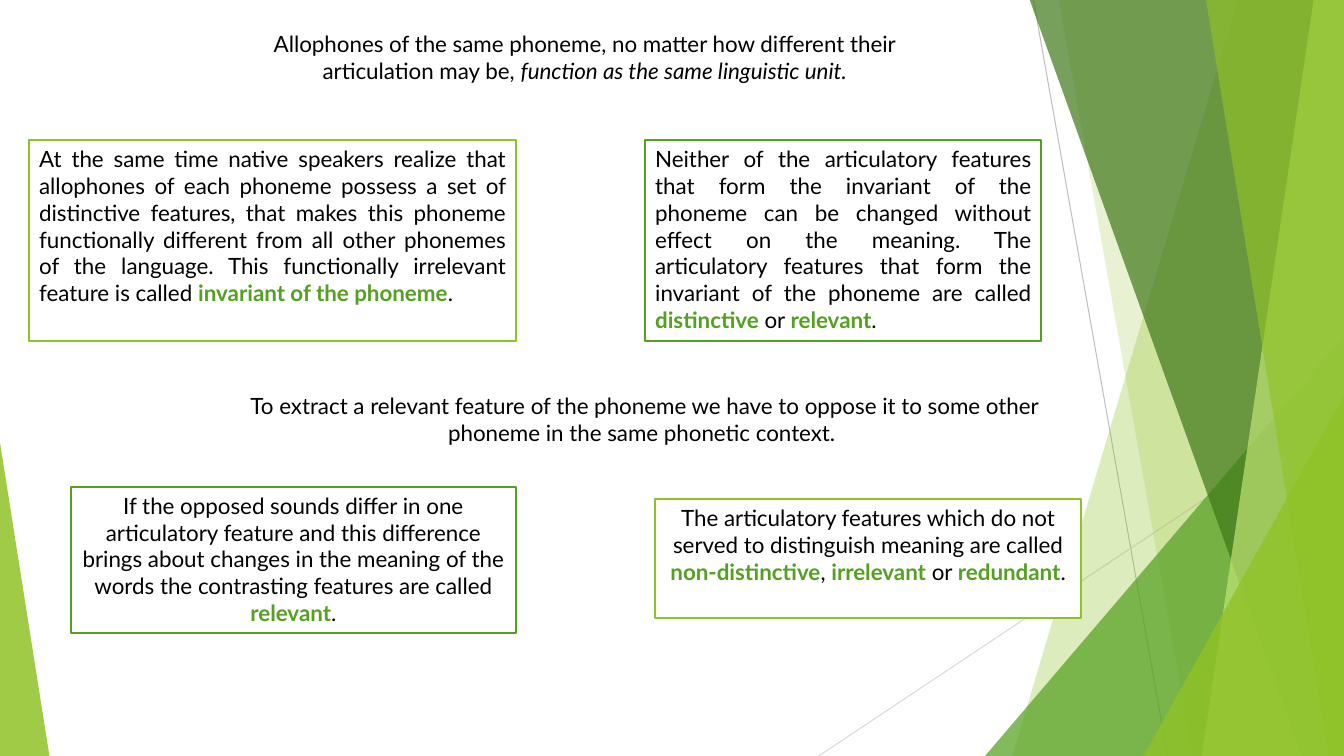
from lxml import etree
from pptx import Presentation
from pptx import util as u
from pptx.dml.color import RGBColor
from pptx.enum import shapes, text
from pptx.oxml.ns import qn

LIME = RGBColor(0x90, 0xC2, 0x26)
GREEN = RGBColor(0x54, 0xA0, 0x21)
DARK_GREEN = RGBColor(0x3F, 0x78, 0x19)
PALE_LIME = RGBColor(0xC0, 0xE4, 0x74)
GRAY = RGBColor(0xBF, 0xBF, 0xBF)
LIGHT_GRAY = RGBColor(0xD9, 0xD9, 0xD9)
BLACK = RGBColor(0, 0, 0)
WHITE = RGBColor(0xFF, 0xFF, 0xFF)
WIDTH, HEIGHT = 13.33, 7.5
CENTER, JUSTIFY = text.PP_ALIGN.CENTER, text.PP_ALIGN.JUSTIFY


class SlideBuilder:
    """Draws facets, lines and text on one slide in a shared style."""

    font_name = "Lato"
    font_size = u.Pt(16)

    def __init__(self, slide):
        self.slide = slide
        self.shapes = slide.shapes

    def line(self, start, end, color):
        points = [u.Inches(value) for value in (*start, *end)]
        connector = self.shapes.add_connector(shapes.MSO_CONNECTOR.STRAIGHT, *points)
        connector.line.color.rgb = color
        connector.line.width = u.Pt(0.75)
        etree.SubElement(connector._element.spPr, qn("a:effectLst"))

    def paint(self, shape, color, opacity):
        shape.shadow.inherit = False
        shape.fill.solid()
        shape.fill.fore_color.rgb = color
        shape.line.fill.background()
        color_element = shape._element.spPr.find(qn("a:solidFill"))[0]
        etree.SubElement(color_element, qn("a:alpha"), val=str(opacity * 1000))

    def facet(self, top_x, bottom_x, color, opacity):
        top = -0.01
        corners = [(top_x, top), (WIDTH, top), (WIDTH, HEIGHT), (bottom_x, HEIGHT)]
        points = [(u.Inches(x), u.Inches(y)) for x, y in corners]
        builder = self.shapes.build_freeform(*points[0])
        builder.add_line_segments(points[1:], close=True)
        self.paint(builder.convert_to_shape(), color, opacity)

    def triangle(self, left, top, width, apex, color, opacity):
        bounds = [u.Inches(value) for value in (left, top, width, HEIGHT - top)]
        shape = self.shapes.add_shape(shapes.MSO_SHAPE.ISOSCELES_TRIANGLE, *bounds)
        shape.adjustments[0] = apex
        self.paint(shape, color, opacity)

    def add_runs(self, shape, parts, alignment):
        frame = shape.text_frame
        frame.word_wrap = True
        frame.vertical_anchor = text.MSO_ANCHOR.TOP
        paragraph = frame.paragraphs[0]
        paragraph.alignment = alignment
        paragraph.font.name = self.font_name
        paragraph.font.size = self.font_size
        for part in parts:
            run = paragraph.add_run()
            run.text = part
            run.font.color.rgb = BLACK
        return paragraph.runs

    def statement(self, bounds, *parts):
        shape = self.shapes.add_textbox(*[u.Inches(value) for value in bounds])
        for run in self.add_runs(shape, parts, CENTER)[1::2]:
            run.font.italic = True

    def box(self, bounds, border, alignment, *parts):
        shape = self.shapes.add_shape(
            shapes.MSO_SHAPE.RECTANGLE, *[u.Inches(value) for value in bounds])
        shape.shadow.inherit = False
        shape.fill.solid()
        shape.fill.fore_color.rgb = WHITE
        shape.line.color.rgb = border
        shape.line.width = u.Pt(1.5)
        for run in self.add_runs(shape, parts, alignment)[1::2]:
            run.font.bold = True
            run.font.color.rgb = GREEN


def main():
    presentation = Presentation()
    presentation.slide_width = u.Inches(WIDTH)
    presentation.slide_height = u.Inches(HEIGHT)
    builder = SlideBuilder(presentation.slides.add_slide(presentation.slide_layouts[6]))

    builder.line((10.25, 0), (11.58, HEIGHT), GRAY)
    builder.line((WIDTH, 4.03), (8.12, HEIGHT), LIGHT_GRAY)
    builder.facet(12.28, 10.04, LIME, 30)
    builder.facet(10.5, 11.83, LIME, 20)
    builder.triangle(9.77, 3.33, 3.56, 1, GREEN, 72)
    builder.facet(10.21, 12.91, DARK_GREEN, 70)
    builder.facet(13.03, 11.92, PALE_LIME, 70)
    builder.facet(11.96, 13.18, LIME, 65)
    builder.triangle(11.34, 3.93, 1.99, 1, LIME, 80)
    builder.triangle(0, 4.39, 0.49, 0, LIME, 85)

    builder.statement(
        (2.59, 0.25, 6.42, 0.91),
        "Allophones of the same phoneme, no matter how different their "
        "articulation may be, ", "function as the same linguistic unit.")
    builder.box(
        (6.5, 4.95, 4.22, 1.18), LIME, CENTER,
        "The articulatory features which do not served to distinguish meaning "
        "are called ", "non-distinctive", ", ", "irrelevant", " or ", "redundant", ".")
    builder.box(
        (0.29, 1.39, 4.83, 1.99), LIME, JUSTIFY,
        "At the same time native speakers realize that allophones of each phoneme "
        "possess a set of distinctive features, that makes this phoneme functionally "
        "different from all other phonemes of the language. This functionally "
        "irrelevant feature is called ", "invariant of the phoneme", ".")
    builder.box(
        (6.4, 1.39, 3.93, 1.99), GREEN, JUSTIFY,
        "Neither of the articulatory features that form the invariant of the phoneme "
        "can be changed without effect on the meaning. The articulatory features that "
        "form the invariant of the phoneme are called ",
        "distinctive", " or ", "relevant", ".")
    builder.statement(
        (2.08, 3.84, 8.63, 0.64),
        "To extract a relevant feature of the phoneme we have to oppose it to some "
        "other phoneme in the same phonetic context. ")
    builder.box(
        (0.7, 4.83, 4.42, 1.45), GREEN, CENTER,
        "If the opposed sounds differ in one articulatory feature and this difference "
        "brings about changes in the meaning of the words the contrasting features "
        "are called ", "relevant", ".")

    presentation.save("out.pptx")


if __name__ == "__main__":
    main()
